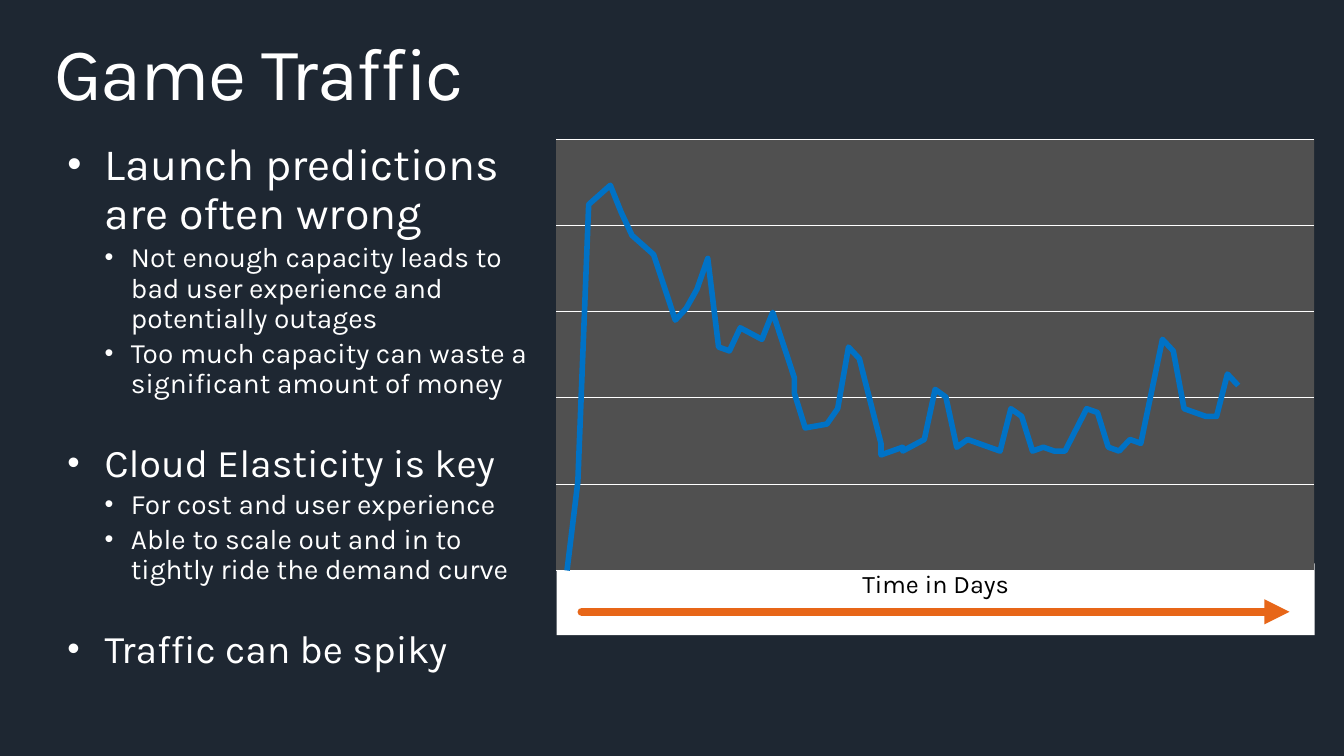
"""Build the Game Traffic slide with its bullets and traffic chart."""
from dataclasses import dataclass
from typing import Any

from lxml import etree
from pptx import Presentation
from pptx import util as u
from pptx.chart import data as chart_data
from pptx.dml import color
from pptx.enum import chart as chart_enum
from pptx.enum import shapes, text
from pptx.oxml import ns, parse_xml

FONT = "Karla"
NAVY, WHITE, BLACK = "1E2732", "FFFFFF", "000000"
GRAY, BLUE, ORANGE = "505050", "0072C6", "E76618"


@dataclass(frozen=True)
class Bullet:
    """One bullet with its size, level and space before."""
    words: str
    size: int
    level: int = 0
    before: float = 3.5


BULLETS = [
    Bullet("Launch predictions are often wrong", 32, before=0),
    Bullet("Not enough capacity leads to \vbad user experience and potentially outages", 20, 1),
    Bullet("Too much capacity can waste a significant amount of money", 20, 1),
    Bullet("Cloud Elasticity is key", 28, before=31),
    Bullet("For cost and user experience", 20, 1),
    Bullet("Able to scale out and in to tightly ride the demand curve", 20, 1),
    Bullet("Traffic can be spiky", 28, before=31),
]
INDENTS = [(0.37, -0.37), (0.63, -0.26)]

DAYS = [1, 2, 3, 5, 6, 7, 9, 11, 12, 13, 14, 15, 16, 17, 19, 20, 22, 22, 23, 25, 26, 27,
        28, 30, 30, 32, 32, 34, 35, 36, 37, 38, 41, 42, 43, 44, 45, 46, 47, 49, 50, 51,
        52, 53, 54, 56, 57, 58, 59, 60, 61, 62, 63]
TRAFFIC = [0, 23, 95, 100, 93, 87, 82, 65, 68, 73, 81, 58, 57, 63, 60, 67, 50, 46, 37, 38,
           42, 58, 55, 33, 30, 32, 31, 34, 47, 45, 32, 34, 31, 42, 40, 31, 32, 31, 31, 42,
           41, 32, 31, 34, 33, 60, 57, 42, 41, 40, 40, 51, 48]


def rgb(value: str) -> color.RGBColor:
    """Turn a hex string into a colour."""
    return color.RGBColor.from_string(value)


def inches(*lengths: float) -> list[u.Length]:
    """Turn numbers into lengths in inches."""
    return [u.Inches(length) for length in lengths]


def write(para: Any, words: str, *, size: int, ink: str = WHITE,
          line: float = 1.0, before: float = 0, tracking: int = 0) -> None:
    """Fill a paragraph with formatted words."""
    para.text = words
    para.line_spacing = line
    para.space_before = u.Pt(before)
    for span in para.runs:
        span.font.name = FONT
        span.font.size = u.Pt(size)
        span.font.color.rgb = rgb(ink)
        if tracking:
            span.font._element.set("spc", str(tracking))


def add_title(page: Any) -> None:
    """Place the slide title."""
    box = page.shapes.add_textbox(*inches(0.38, 0.26, 10.44, 1.44))
    frame = box.text_frame
    frame.word_wrap = True
    frame.margin_left = frame.margin_right = u.Inches(0.16)
    frame.margin_top = frame.margin_bottom = u.Inches(0.1)
    write(frame.paragraphs[0], "Game Traffic", size=53, line=0.9, tracking=-100)


def add_bullets(page: Any) -> None:
    """Place the bullet list."""
    frame = page.shapes.add_textbox(*inches(0.57, 1.36, 4.99, 5.84)).text_frame
    frame.word_wrap = True
    for index, bullet in enumerate(BULLETS):
        para = frame.add_paragraph() if index else frame.paragraphs[0]
        para.level = bullet.level
        props = para._p.get_or_add_pPr()
        margin, hanging = inches(*INDENTS[bullet.level])
        props.set("marL", str(margin))
        props.set("indent", str(hanging))
        etree.SubElement(props, ns.qn("a:buSzPct"), val="90000")
        etree.SubElement(props, ns.qn("a:buFont"), typeface="Arial")
        etree.SubElement(props, ns.qn("a:buChar"), char="•")
        write(para, bullet.words, size=bullet.size, line=0.9, before=bullet.before)


def add_time_band(page: Any) -> None:
    """Place the white band with its label and arrow."""
    band = page.shapes.add_shape(shapes.MSO_SHAPE.RECTANGLE, *inches(5.52, 5.59, 7.52, 0.71))
    band.shadow.inherit = False
    band.fill.solid()
    band.fill.fore_color.rgb = rgb(WHITE)
    band.line.fill.background()
    band.text_frame.vertical_anchor = text.MSO_ANCHOR.TOP
    para = band.text_frame.paragraphs[0]
    para.alignment = text.PP_ALIGN.CENTER
    write(para, "Time in Days", size=18, ink=BLACK)

    arrow = page.shapes.add_connector(
        shapes.MSO_CONNECTOR.STRAIGHT, *inches(5.77, 6.07, 12.79, 6.07))
    arrow.line.color.rgb = rgb(ORANGE)
    arrow.line.width = u.Pt(6)
    props = arrow._element.spPr
    outline = props.find(ns.qn("a:ln"))
    outline.set("cap", "rnd")
    etree.SubElement(outline, ns.qn("a:tailEnd"), type="triangle")
    etree.SubElement(props, ns.qn("a:effectLst"))


def style_plot(chart: Any, x: float, y: float, width: float, height: float) -> None:
    """Set the inner plot position as shares of the chart, and its fill."""
    area = chart._chartSpace.find(".//" + ns.qn("c:plotArea"))
    for old in area.findall(ns.qn("c:layout")):
        area.remove(old)
    layout = etree.Element(ns.qn("c:layout"))
    manual = etree.SubElement(layout, ns.qn("c:manualLayout"))
    settings = {"layoutTarget": "inner", "xMode": "edge", "yMode": "edge",
                "x": x, "y": y, "w": width, "h": height}
    for name, value in settings.items():
        etree.SubElement(manual, ns.qn(f"c:{name}"), val=str(value))
    area.insert(0, layout)
    area.append(parse_xml(
        f'<c:spPr {ns.nsdecls("c", "a")}><a:solidFill><a:srgbClr val="{GRAY}"/>'
        "</a:solidFill></c:spPr>"))


def add_traffic_chart(page: Any) -> None:
    """Place the traffic curve."""
    source = chart_data.XyChartData()
    points = source.add_series("Series 1")
    for day, traffic in zip(DAYS, TRAFFIC):
        points.add_data_point(day, traffic)
    chart = page.shapes.add_chart(
        chart_enum.XL_CHART_TYPE.XY_SCATTER_LINES_NO_MARKERS,
        *inches(5.36, 1.29, 7.83, 4.46), source).chart
    chart.has_legend = chart.has_title = False
    chart.font.name = FONT
    chart.font.size = u.Pt(10)
    chart.font.color.rgb = rgb(WHITE)
    chart.plots[0].vary_by_categories = False

    for axis, top, step in ((chart.category_axis, 70, 10), (chart.value_axis, 112, 22.4)):
        axis.minimum_scale, axis.maximum_scale, axis.major_unit = 0, top, step
        axis.visible = False
    chart.category_axis.has_major_gridlines = False
    grid = chart.value_axis.major_gridlines.format.line
    grid.color.rgb = rgb(WHITE)
    grid.width = u.Pt(0.75)

    curve = chart.plots[0].series[0]
    curve.smooth = False
    curve.format.line.color.rgb = rgb(BLUE)
    curve.format.line.width = u.Pt(4)
    style_plot(chart, 0.02, 0.02, 0.96, 0.96)


def main() -> None:
    """Build and save the deck."""
    deck = Presentation()
    deck.slide_width, deck.slide_height = inches(13.33, 7.5)
    page = deck.slides.add_slide(deck.slide_layouts[6])
    page.background.fill.solid()
    page.background.fill.fore_color.rgb = rgb(NAVY)
    add_title(page)
    add_bullets(page)
    add_time_band(page)
    add_traffic_chart(page)
    deck.save("out.pptx")


if __name__ == "__main__":
    main()
